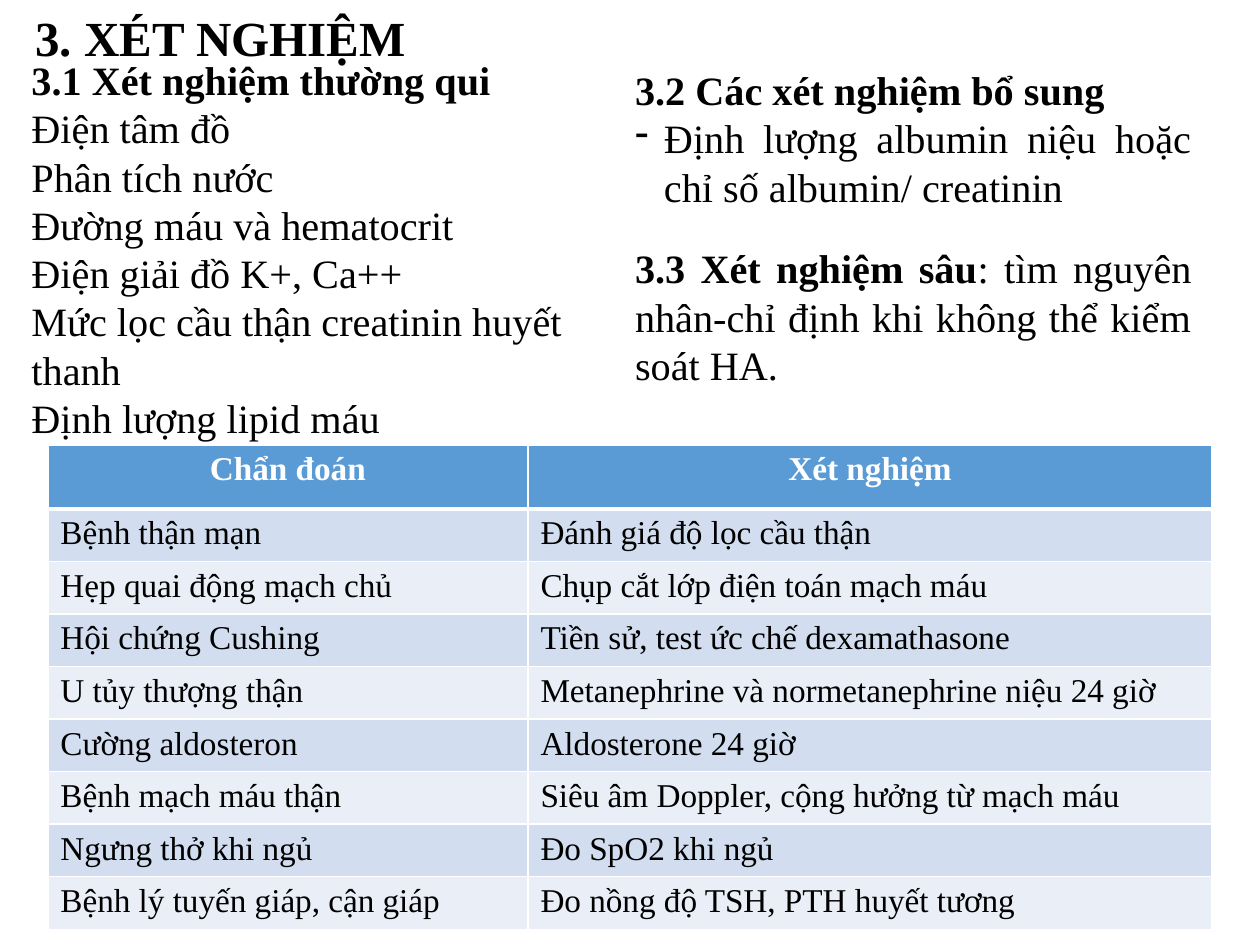
from lxml import etree
from pptx import Presentation
from pptx import util as u
from pptx.dml import color
from pptx.enum import text
from pptx.oxml import ns

COLORS = {"ink": "000000", "paper": "FFFFFF", "header": "5B9BD5",
          "odd": "D2DEEF", "even": "EAEFF7"}
BODY, HEADING, CELL = 23, 28, 19
ROUTINE_TESTS = ["Điện tâm đồ", "Phân tích nước", "Đường máu và hematocrit",
                 "Điện giải đồ K+, Ca++", "Mức lọc cầu thận creatinin huyết thanh",
                 "Định lượng lipid máu"]
DIAGNOSES = [
    ("Chẩn đoán", "Xét nghiệm"),
    ("Bệnh thận mạn", "Đánh giá độ lọc cầu thận"),
    ("Hẹp quai động mạch chủ", "Chụp cắt lớp điện toán mạch máu"),
    ("Hội chứng Cushing", "Tiền sử, test ức chế dexamathasone"),
    ("U tủy thượng thận", "Metanephrine và normetanephrine niệu 24 giờ"),
    ("Cường aldosteron", "Aldosterone 24 giờ"),
    ("Bệnh mạch máu thận", "Siêu âm Doppler, cộng hưởng từ mạch máu"),
    ("Ngưng thở khi ngủ", "Đo SpO2 khi ngủ"),
    ("Bệnh lý tuyến giáp, cận giáp", "Đo nồng độ TSH, PTH huyết tương"),
]


class Sheet:
    """Draws styled elements on one slide over a grid of 100 columns and 75 rows."""

    def __init__(self, deck):
        self.font = "Times New Roman"
        self.column, self.row = deck.slide_width / 100, deck.slide_height / 75
        self.slide = deck.slides.add_slide(deck.slide_layouts[6])

    def place(self, left, top, width, height):
        return (round(left * self.column), round(top * self.row),
                round(width * self.column), round(height * self.row))

    def fill_paragraph(self, paragraph, runs, size, ink="ink", layout=None):
        for name, value in (layout or {}).items():
            setattr(paragraph, name, value)
        for words, bold in runs:
            run = paragraph.add_run()
            run.text = words
            for name, value in {"name": self.font, "size": u.Pt(size), "bold": bold}.items():
                setattr(run.font, name, value)
            run.font.color.rgb = color.RGBColor.from_string(COLORS[ink])

    def dash(self, paragraph, indent):
        properties = paragraph._p.get_or_add_pPr()
        properties.set("marL", str(round(indent * self.column)))
        properties.set("indent", str(round(-indent * self.column)))
        etree.SubElement(properties, ns.qn("a:buFontTx"))
        etree.SubElement(properties, ns.qn("a:buChar")).set("char", "-")

    def text(self, box, paragraphs, size, layout=None):
        frame = self.slide.shapes.add_textbox(*self.place(*box)).text_frame
        side, edge = round(0.7 * self.column), round(0.4 * self.row)
        style = {"word_wrap": True, "margin_left": side, "margin_right": side,
                 "margin_top": edge, "margin_bottom": edge}
        for name, value in style.items():
            setattr(frame, name, value)
        for index, runs in enumerate(paragraphs):
            paragraph = frame.add_paragraph() if index else frame.paragraphs[0]
            self.fill_paragraph(paragraph, runs, size, layout=layout)
        return frame.paragraphs

    def border(self, cell, sides):
        properties = cell._tc.get_or_add_tcPr()
        for position, (side, points) in enumerate(sides.items()):
            line = etree.Element(ns.qn(f"a:ln{side}"), w=str(u.Pt(points)))
            fill = etree.SubElement(line, ns.qn("a:solidFill"))
            etree.SubElement(fill, ns.qn("a:srgbClr")).set("val", COLORS["paper"])
            properties.insert(position, line)

    def table(self, box, rows, widths, header_height):
        grid = self.slide.shapes.add_table(len(rows), len(widths), *self.place(*box)).table
        for column, width in zip(grid.columns, widths):
            column.width = round(width * self.column)
        body_height = (box[3] - header_height) / (len(rows) - 1)
        for r, entries in enumerate(rows):
            grid.rows[r].height = round((body_height if r else header_height) * self.row)
            shade = ("even", "odd")[r % 2] if r else "header"
            align = text.PP_ALIGN.LEFT if r else text.PP_ALIGN.CENTER
            for c, words in enumerate(entries):
                cell = grid.cell(r, c)
                cell.fill.solid()
                cell.fill.fore_color.rgb = color.RGBColor.from_string(COLORS[shade])
                self.border(cell, {"L": 1, "R": 1, "T": 3 if r == 1 else 1, "B": 1 if r else 3})
                self.fill_paragraph(cell.text_frame.paragraphs[0], [(words, not r)], CELL,
                                    "ink" if r else "paper", {"alignment": align})


def main():
    deck = Presentation()
    deck.slide_width, deck.slide_height = u.Inches(10), u.Inches(7.5)
    sheet = Sheet(deck)
    sheet.text((2.1, 0.2, 32.6, 5.5), [[("3. XÉT NGHIỆM", True)]], HEADING)
    routine = [[("3.1 Xét nghiệm thường qui", True)]]
    routine += [[(test, False)] for test in ROUTINE_TESTS]
    sheet.text((1.8, 4, 46.6, 31.7), routine, BODY)
    further = [
        [("3.2 Các xét nghiệm bổ sung", True)],
        [("Định lượng albumin niệu hoặc chỉ số albumin/ creatinin", False)],
        [("3.3 Xét nghiệm sâu", True),
         (": tìm nguyên nhân-chỉ định khi không thể kiểm soát HA.", False)],
    ]
    _, albumin, causes = sheet.text((49.7, 4.8, 45.6, 26.7), further, BODY,
                                    {"alignment": text.PP_ALIGN.JUSTIFY})
    sheet.dash(albumin, 2.3)
    causes.space_before = u.Pt(19)
    sheet.table((3.8, 35.3, 92.4, 38.4), DIAGNOSES, (38.1, 54.3), 5.1)
    deck.save("out.pptx")


if __name__ == "__main__":
    main()
